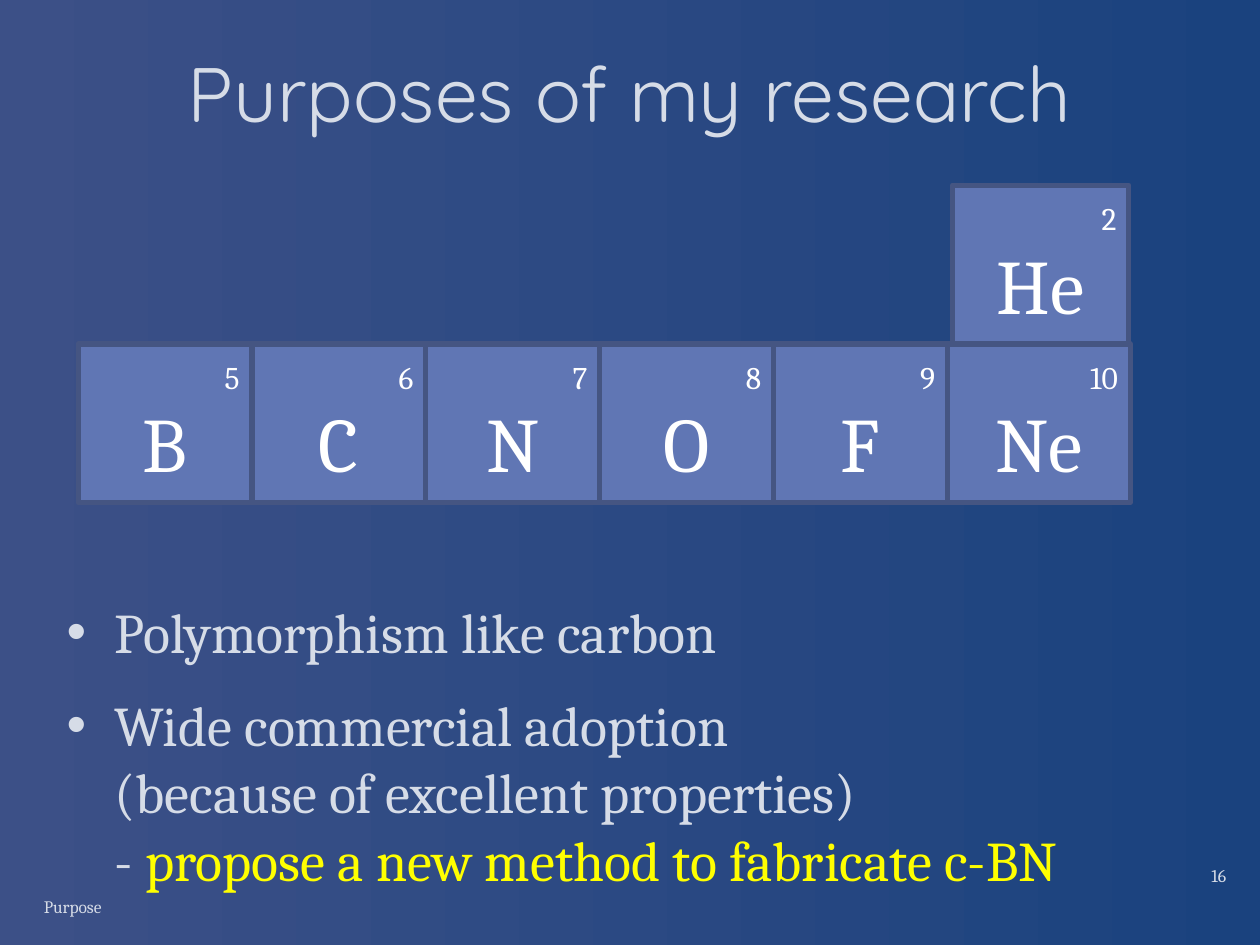
from dataclasses import dataclass

from lxml.etree import SubElement
from pptx import Presentation
from pptx.dml.color import RGBColor
from pptx.enum.shapes import MSO_SHAPE
from pptx.enum.text import MSO_ANCHOR, PP_ALIGN
from pptx.oxml.ns import qn
from pptx.util import Inches, Pt


@dataclass(frozen=True)
class Theme:
    left: str = "3C5087"
    right: str = "1A427E"
    tile: str = "6076B4"
    edge: str = "455582"
    white: str = "FFFFFF"
    soft: str = "D6DCE7"
    mark: str = "FFFF00"
    head: str = "Quicksand"
    body: str = "Cambria"
    large: float = 44
    text: float = 32
    count: float = 18
    page: float = 10.2
    foot: float = 10


THEME = Theme()


def apply(item, values):
    for name, value in values.items():
        setattr(item, name, value)


def style(size, color=THEME.soft, face=THEME.body):
    return {"size": Pt(size), "name": face, "color": color}


def add_run(para, text, look):
    run = para.add_run()
    run.text = text
    values = dict(look)
    run.font.color.rgb = RGBColor.from_string(values.pop("color"))
    apply(run.font, values)


def add_box(slide, area, anchor):
    """Add an empty wrapped text box and return its text frame."""
    frame = slide.shapes.add_textbox(*map(Inches, area)).text_frame
    apply(frame, {"word_wrap": True, "vertical_anchor": anchor})
    return frame


def add_label(slide, area, text, look, align=PP_ALIGN.LEFT):
    para = add_box(slide, area, MSO_ANCHOR.BOTTOM).paragraphs[0]
    para.alignment = align
    add_run(para, text, look)


def add_tile(slide, area, number, symbol):
    """Draw one element of the periodic table."""
    shape = slide.shapes.add_shape(MSO_SHAPE.RECTANGLE, *map(Inches, area))
    shape.shadow.inherit = False
    shape.fill.solid()
    shape.fill.fore_color.rgb = RGBColor.from_string(THEME.tile)
    shape.line.color.rgb = RGBColor.from_string(THEME.edge)
    shape.line.width = Pt(3)
    frame = shape.text_frame
    frame.vertical_anchor = MSO_ANCHOR.MIDDLE
    top, base = frame.paragraphs[0], frame.add_paragraph()
    top.alignment, base.alignment = PP_ALIGN.RIGHT, PP_ALIGN.CENTER
    add_run(top, str(number), style(THEME.count, THEME.white))
    add_run(base, symbol, style(THEME.large, THEME.white))


def add_point(para, lines, look):
    """Fill a bulleted paragraph with lines parted by line breaks."""
    props = para._p.get_or_add_pPr()
    indent = Inches(0.38)
    props.set("marL", str(indent))
    props.set("indent", str(-indent))
    SubElement(props, qn("a:buFont"), typeface="Arial")
    SubElement(props, qn("a:buChar"), char="•")
    for index, line in enumerate(lines):
        if index:
            para.add_line_break()
        add_run(para, line, look)


def add_back(slide):
    fill = slide.background.fill
    fill.gradient()
    fill.gradient_angle = 0
    for stop, color in zip(fill.gradient_stops, (THEME.left, THEME.right)):
        stop.color.rgb = RGBColor.from_string(color)


def add_tiles(slide):
    left, top, width, height = 0.62, 2.73, 1.38, 1.26
    add_tile(slide, (7.56, top - height, 1.4, height), 2, "He")
    row = list(enumerate(("B", "C", "N", "O", "F", "Ne")))
    for index, symbol in reversed(row):
        span = 1.45 if symbol == "Ne" else width
        area = left + index * width, top, span, height
        add_tile(slide, area, index + 5, symbol)


def add_points(slide):
    frame = add_box(slide, (0.43, 4.69, 9.57, 2.81), MSO_ANCHOR.TOP)
    look = style(THEME.text)
    add_point(frame.paragraphs[0], ["Polymorphism like carbon"], look)
    last = frame.add_paragraph()
    last.space_before = Pt(15)
    lines = ["Wide commercial adoption",
             "(because of excellent properties)", "- "]
    add_point(last, lines, look)
    add_run(last, "propose a new method to fabricate c-BN",
            style(THEME.text, THEME.mark))


def main():
    deck = Presentation()
    apply(deck, {"slide_width": Inches(10), "slide_height": Inches(7.5)})
    slide = deck.slides.add_slide(deck.slide_layouts[6])
    add_back(slide)
    add_label(slide, (0, 0.13, 10, 1.01), "Purposes of my research",
              style(THEME.large, face=THEME.head), PP_ALIGN.CENTER)
    add_label(slide, (9.25, 6.83, 0.58, 0.25), "16",
              style(THEME.page), PP_ALIGN.RIGHT)
    add_tiles(slide)
    add_points(slide)
    add_label(slide, (0.25, 7.08, 3.17, 0.25), "Purpose", style(THEME.foot))
    deck.save("out.pptx")


if __name__ == "__main__":
    main()
